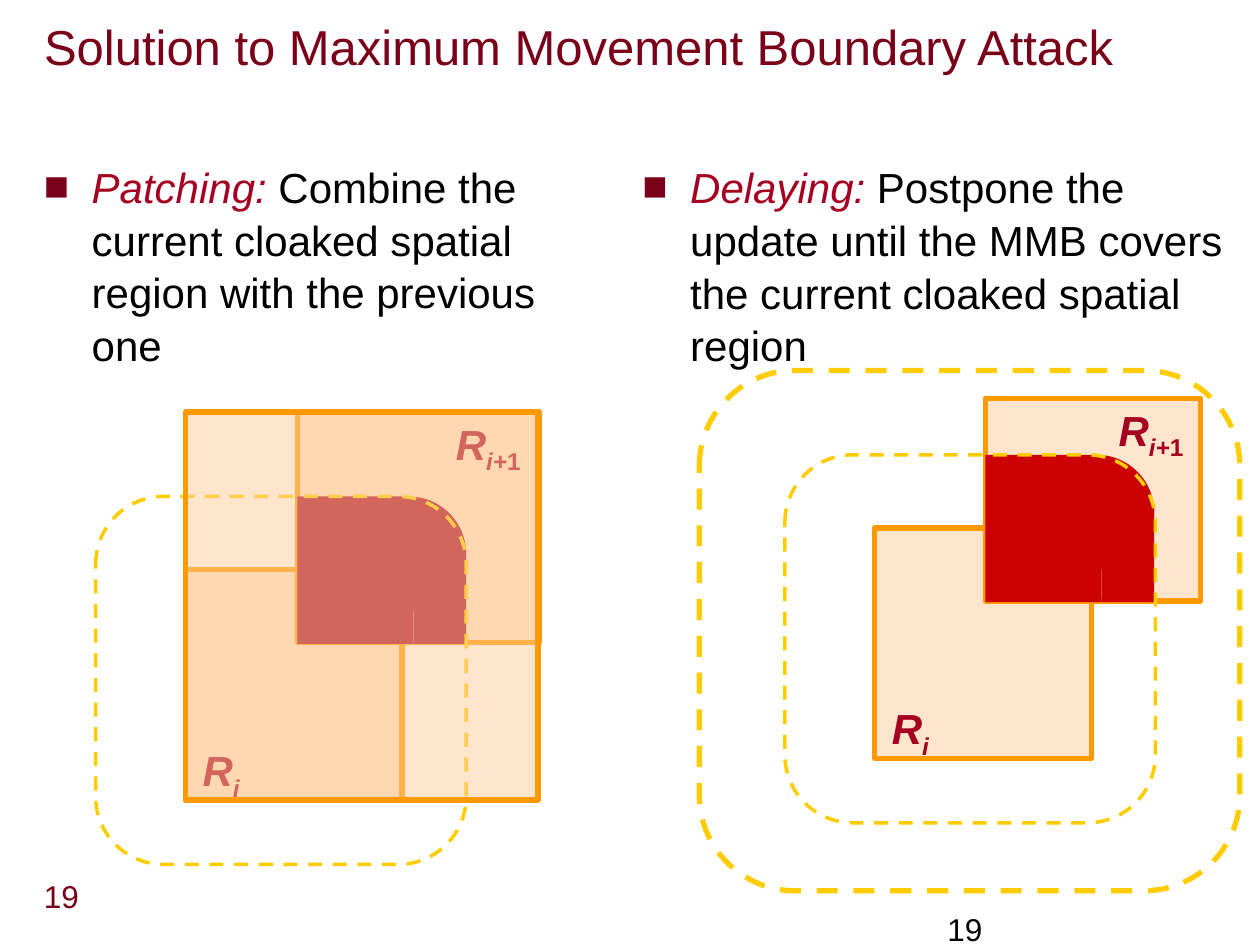
from lxml import etree
from pptx import Presentation
from pptx.dml import color
from pptx.enum import dml, shapes, text
from pptx.oxml import ns
from pptx.util import Inches, Pt

HUES = {"maroon": "7A0019", "red": "A50021", "bright": "CC0000", "peach": "FFCC99",
        "orange": "FF9900", "gold": "FFCC00", "black": "000000"}
RECT, ROUND = shapes.MSO_SHAPE.RECTANGLE, shapes.MSO_SHAPE.ROUNDED_RECTANGLE


def draw(home, kind, at, fill=None, line=None, width=3, adj=None):
    """Add a shape; a peach fill is half transparent, a gold line is dashed."""
    shape = home.shapes.add_shape(kind, *map(Inches, at))
    shape.shadow.inherit = False
    if adj is not None:
        shape.adjustments[0] = adj
    if fill:
        shape.fill.solid()
        shape.fill.fore_color.rgb = color.RGBColor.from_string(HUES[fill])
        if fill == "peach":
            tint = shape.fill._xPr.find(".//" + ns.qn("a:srgbClr"))
            etree.SubElement(tint, ns.qn("a:alpha"), val="50000")
    else:
        shape.fill.background()
    if line:
        shape.line.color.rgb = color.RGBColor.from_string(HUES[line])
        shape.line.width = Pt(width)
        if line == "gold":
            shape.line.dash_style = dml.MSO_LINE.DASH
    else:
        shape.line.fill.background()


def write(box, at, runs, size, wrap=True, top=0.05):
    """Place a text shape and fill it with (text, hue, font values, baseline) runs."""
    box.left, box.top, box.width, box.height = map(Inches, at)
    frame = box.text_frame
    looks = {"word_wrap": wrap, "margin_top": Inches(top),
             "vertical_anchor": text.MSO_ANCHOR.TOP,
             "auto_size": text.MSO_AUTO_SIZE.NONE}
    for name, value in looks.items():
        setattr(frame, name, value)
    para = frame.paragraphs[0]
    para.alignment = text.PP_ALIGN.LEFT
    for words, hue, style, base in runs:
        run = para.add_run()
        run.text = words
        for name, value in {"name": "Arial", "size": Pt(size), **style}.items():
            setattr(run.font, name, value)
        run.font.color.rgb = color.RGBColor.from_string(HUES[hue])
        if base:
            run._r.get_or_add_rPr().set("baseline", str(base))
    return para


deck = Presentation()
deck.slide_width, deck.slide_height = Inches(10), Inches(7.5)
slide = deck.slides.add_slide(deck.slide_layouts[5])
blank = (0, 0, 0, 0)

write(slide.shapes.title, (0.25, 0.1, 8.92, 0.83),
      [("Solution to Maximum Movement Boundary Attack", "maroon", {}, 0)], 28, top=0.03)

# Page numbers
for at, hue in [((0.25, 6.91, 0.51, 0.4), "maroon"), ((7.42, 7.17, 2.08, 0.33), "black")]:
    write(slide.shapes.add_textbox(*blank), at, [("19", hue, {}, 0)], 18)

# Bulleted descriptions
notes = [
    ((0.25, 1.19, 4.7, 1.43), "Patching: ",
     "Combine the current cloaked spatial region with the previous one"),
    ((5, 1.19, 4.83, 1.75), "Delaying: ",
     "Postpone the update until the MMB covers the current cloaked spatial region"),
]
for at, term, words in notes:
    para = write(slide.shapes.add_textbox(*blank), at,
                 [(term, "red", {"italic": True}, 0), (words, "black", {}, 0)], 24, top=0.07)
    para.line_spacing = 1.05
    props = para._p.get_or_add_pPr()
    props.set("marL", str(Inches(0.38)))
    props.set("indent", str(-Inches(0.38)))
    tint = etree.SubElement(props, ns.qn("a:buClr"))
    etree.SubElement(tint, ns.qn("a:srgbClr"), val=HUES["maroon"])
    etree.SubElement(props, ns.qn("a:buFont"), typeface="Arial")
    etree.SubElement(props, ns.qn("a:buChar"), char="■")

# Diagrams: current region, next region, their overlap, boundary and outer frame
plans = [
    {"now": (1.47, 4.52, 1.72, 1.83), "next": (2.36, 3.27, 1.92, 1.83),
     "meet": (2.36, 3.94), "hue": "red", "bound": (0.76, 3.94), "tag": (3.52, 3.27),
     "frame": (RECT, (1.47, 3.27, 2.8, 3.08), "peach", "orange")},
    {"now": (6.94, 4.19, 1.72, 1.83), "next": (7.82, 3.16, 1.71, 1.61),
     "meet": (7.82, 3.61), "hue": "bright", "bound": (6.23, 3.61), "tag": (8.78, 3.16),
     "frame": (ROUND, (5.55, 2.94, 4.29, 4.13), None, "gold", 3, 0.184)},
]
parts = [(RECT, 0, 0, 0.92, 1.17, None), (RECT, 0.92, 0.42, 0.42, 0.75, None),
         (ROUND, 0.42, 0, 0.92, 0.91, 0.5)]
slant = {"bold": True, "italic": True}
for plan in plans:
    for key in ("now", "next"):
        draw(slide, RECT, plan[key], "peach", "orange")

    group = slide.shapes.add_group_shape()
    x, y = plan["meet"]
    for kind, dx, dy, w, h, adj in parts:
        draw(group, kind, (x + dx, y + dy, w, h), plan["hue"], adj=adj)

    x, y = plan["now"][:2]
    tags = [((x + 0.04, y + 1.34, 0.51, 0.5), [("i", slant)]),
            ((*plan["tag"], 0.76, 0.5), [("i+", slant), ("1", {"bold": True})])]
    for at, subs in tags:
        runs = [("R", "red", slant, 0)] + [(s, "red", style, -25000) for s, style in subs]
        write(slide.shapes.add_textbox(*blank), at, runs, 24, wrap=False)

    draw(slide, ROUND, (*plan["bound"], 2.94, 2.92), line="gold", width=2, adj=0.184)
    draw(slide, *plan["frame"])

deck.save("out.pptx")
